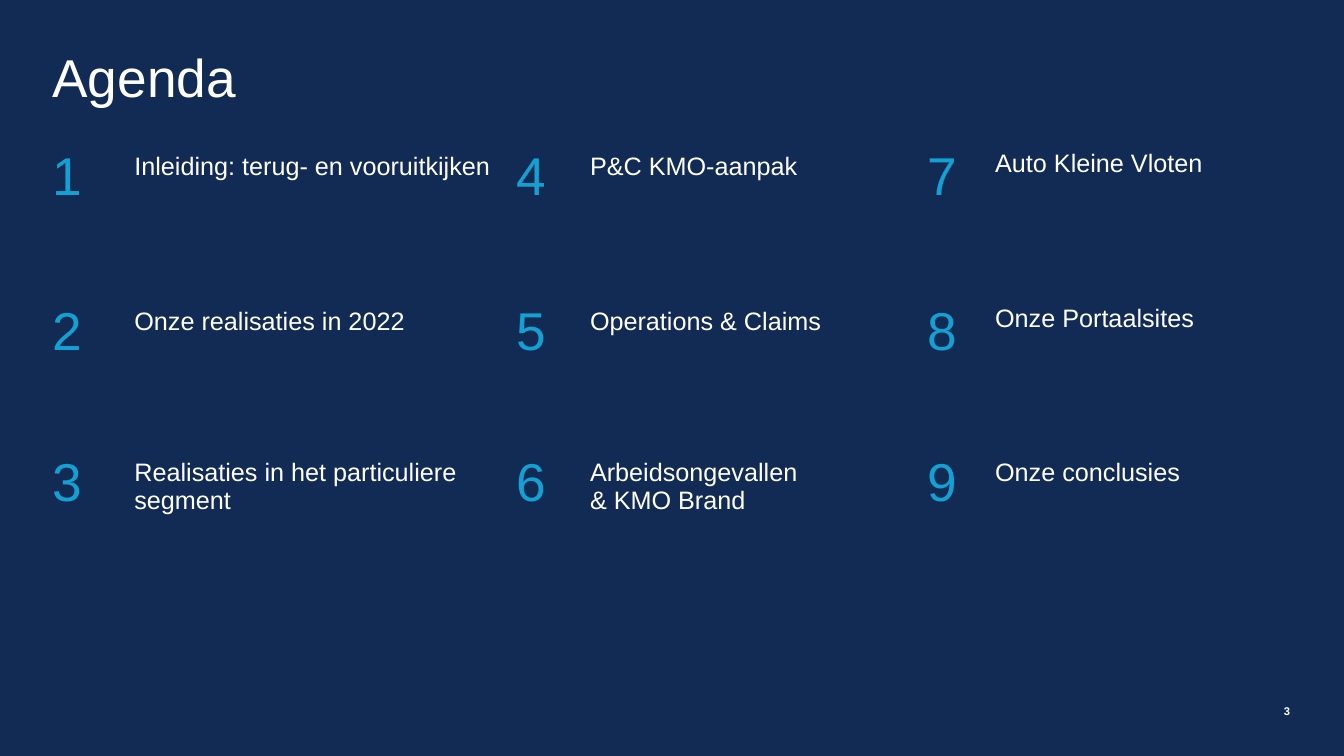
"""Build the agenda slide: nine numbered topics in three columns."""
from dataclasses import dataclass

from pptx import Presentation
from pptx.dml.color import RGBColor
from pptx.enum.text import MSO_ANCHOR, PP_ALIGN
from pptx.oxml.ns import qn
from pptx.util import Pt


@dataclass(frozen=True)
class Theme:
    font: str = "Arial"
    navy: RGBColor = RGBColor(0x12, 0x2B, 0x54)
    cyan: RGBColor = RGBColor(0x13, 0xA0, 0xD3)
    white: RGBColor = RGBColor(0xFF, 0xFF, 0xFF)
    large: Pt = Pt(38)
    body: Pt = Pt(18)
    small: Pt = Pt(8)


theme = Theme()


def write(frame, text, size=theme.body, color=theme.white, bold=False,
          align=PP_ALIGN.LEFT, spacing=1.0, anchor=MSO_ANCHOR.TOP, bottom=Pt(0)):
    frame.margin_left = frame.margin_top = frame.margin_right = Pt(0)
    frame.margin_bottom = bottom
    frame.vertical_anchor = anchor
    frame.word_wrap = True
    frame.text = text
    for para in frame.paragraphs:
        para.alignment = align
        para.line_spacing = spacing
        para.space_before = Pt(0)
        for span in para.runs:
            span.font.name = theme.font
            span.font.size = size
            span.font.bold = bold
            span.font.color.rgb = color


deck = Presentation()
deck.slide_width, deck.slide_height = Pt(960), Pt(540)
page = deck.slides.add_slide(deck.slide_layouts[5])
page.background.fill.solid()
page.background.fill.fore_color.rgb = theme.navy

title = page.shapes.title
title.left, title.top, title.width, title.height = Pt(37.4), Pt(38.9), Pt(734.4), Pt(69.8)
write(title.text_frame, "Agenda", size=theme.large, spacing=Pt(38))

topics = [
    "Inleiding: terug- en vooruitkijken",
    "Onze realisaties in 2022",
    "Realisaties in het particuliere segment",
    "P&C KMO-aanpak",
    "Operations & Claims",
    "Arbeidsongevallen\v& KMO Brand",
    "Auto Kleine Vloten",
    "Onze Portaalsites",
    "Onze conclusies",
]
tight_topics = {"Auto Kleine Vloten", "Onze Portaalsites"}
column_widths = [58.6, 272.9, 52.6, 241.2, 48.2, 211]
row_heights = [110.9, 108, 103.7]

agenda_shape = page.shapes.add_table(
    len(row_heights), len(column_widths), Pt(37.4), Pt(108.7),
    Pt(sum(column_widths)), Pt(sum(row_heights)))
agenda = agenda_shape.table
agenda.first_row = agenda.horz_banding = False
for style in agenda_shape._element.iter(qn("a:tableStyleId")):
    style.text = "{2D5ABB26-0587-4C30-8999-92F81FD0307C}"
for column, width in zip(agenda.columns, column_widths):
    column.width = Pt(width)
for row, height in zip(agenda.rows, row_heights):
    row.height = Pt(height)

for index, topic in enumerate(topics):
    group, line = divmod(index, len(row_heights))
    number_cell = agenda.cell(line, 2 * group)
    topic_cell = agenda.cell(line, 2 * group + 1)
    entries = [
        (number_cell, str(index + 1), theme.large, theme.cyan, 0.9),
        (topic_cell, topic, theme.body, theme.white, 0.9 if topic in tight_topics else 1.0),
    ]
    for cell, text, size, color, spacing in entries:
        cell.fill.background()
        write(cell.text_frame, text, size=size, color=color, spacing=spacing)
        cell.margin_left = cell.margin_top = cell.margin_right = Pt(0)
        cell.margin_bottom = Pt(26.6)
        cell.vertical_anchor = MSO_ANCHOR.TOP

page_number = page.shapes.add_textbox(Pt(900.7), Pt(501.8), Pt(20.9), Pt(11.5))
write(page_number.text_frame, "3", size=theme.small, bold=True,
      align=PP_ALIGN.RIGHT, spacing=Pt(10), anchor=MSO_ANCHOR.MIDDLE)

deck.save("out.pptx")
